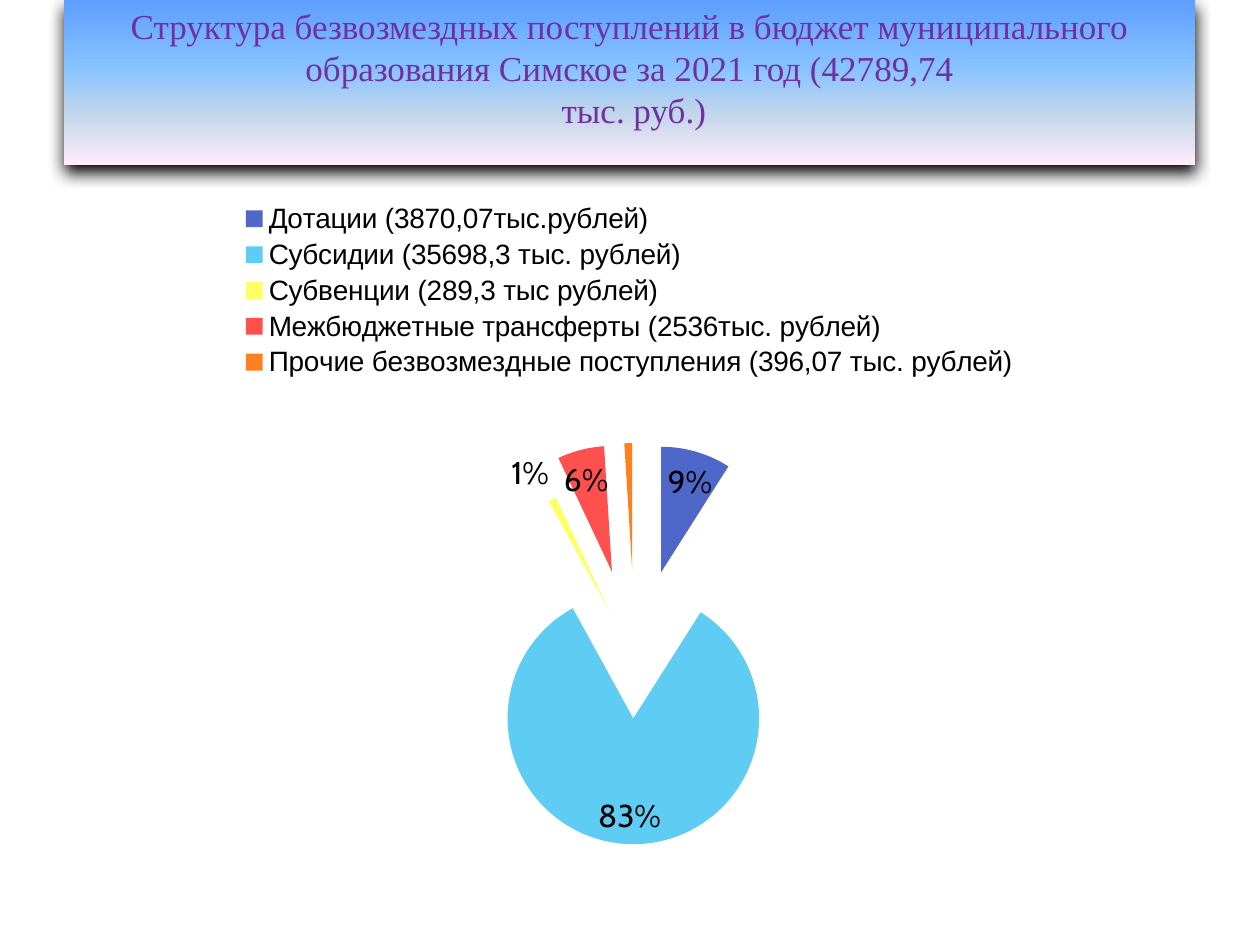
import pptx
import pptx.chart.data
import pptx.dml.color
import pptx.enum.chart
import pptx.enum.text
import pptx.oxml
import pptx.oxml.ns
import pptx.util

EMU_PER_PX = 914400 / 126
BANNER_STOPS = [(0, "5E9EFF"), (40, "85C2FF"), (70, "C4D6EB"), (100, "FFEBFA")]
TITLE_LINES = [
    "Структура безвозмездных поступлений в бюджет муниципального образования Симское за 2021 год (42789,74",
    " тыс. руб.)",
]
RECEIPTS = [
    ("Дотации (3870,07тыс.рублей)", 9, "4E67C8", 74),
    ("Субсидии (35698,3 тыс. рублей)", 83, "5ECCF3", 45),
    ("Субвенции (289,3 тыс рублей)", 1, "FFFF66", 45),
    ("Межбюджетные трансферты (2536тыс. рублей)", 6, "FF5050", 74),
    ("Прочие безвозмездные поступления (396,07 тыс. рублей)", 1, "FF8021", 74),
]


def px(length):
    return pptx.util.Emu(round(length * EMU_PER_PX))


def color(value):
    return pptx.dml.color.RGBColor.from_string(value)


def element(tag, content="", attributes=""):
    namespaces = pptx.oxml.ns.nsdecls("a", "c")
    return pptx.oxml.parse_xml(f"<{tag} {namespaces} {attributes}>{content}</{tag}>")


class SlideBuilder:
    title_font = "Times New Roman"
    title_color = "7030A0"
    label_font = "Cabin"
    legend_font = "Arial"
    text_color = "000000"

    def __init__(self, presentation):
        self.slide = presentation.slides.add_slide(presentation.slide_layouts[5])

    def style_font(self, font, name, size, value):
        font.name = name
        font.size = pptx.util.Pt(size)
        font.color.rgb = color(value)

    def title(self, left, top, width, height, lines, stops):
        shape = self.slide.shapes.title
        shape.left, shape.top, shape.width, shape.height = map(px, (left, top, width, height))
        gradient = "".join(
            f'<a:gs pos="{position * 1000}"><a:srgbClr val="{value}"/></a:gs>'
            for position, value in stops
        )
        properties = shape.fill._xPr
        properties.append(element(
            "a:gradFill",
            f'<a:gsLst>{gradient}</a:gsLst><a:lin ang="5400000" scaled="0"/>',
            'rotWithShape="1"',
        ))
        shape.line.fill.background()
        properties.append(element(
            "a:effectLst",
            '<a:outerShdw blurRad="114300" dist="50800" dir="5400000" rotWithShape="0">'
            '<a:srgbClr val="000000"><a:alpha val="98000"/></a:srgbClr></a:outerShdw>',
        ))
        frame = shape.text_frame
        frame.word_wrap = True
        frame.auto_size = pptx.enum.text.MSO_AUTO_SIZE.NONE
        frame.vertical_anchor = pptx.enum.text.MSO_ANCHOR.TOP
        frame.margin_top = px(4)
        for index, line in enumerate(lines):
            paragraph = frame.add_paragraph() if index else frame.paragraphs[0]
            paragraph.alignment = pptx.enum.text.PP_ALIGN.CENTER
            paragraph.line_spacing = pptx.util.Pt(24)
            paragraph.space_before = pptx.util.Pt(0)
            run = paragraph.add_run()
            run.text = line
            self.style_font(run.font, self.title_font, 20, self.title_color)

    def pie(self, left, top, width, height, receipts, explosion, unlabelled):
        data = pptx.chart.data.CategoryChartData()
        data.categories = [name for name, *_ in receipts]
        data.add_series("Series 1", [share for _, share, *_ in receipts])
        chart = self.slide.shapes.add_chart(
            pptx.enum.chart.XL_CHART_TYPE.PIE, *map(px, (left, top, width, height)), data
        ).chart
        chart.has_title = False
        self.style_font(chart.font, self.label_font, 18, self.text_color)
        chart.has_legend = True
        chart.legend.position = pptx.enum.chart.XL_LEGEND_POSITION.TOP
        chart.legend.include_in_layout = False
        self.style_font(chart.legend.font, self.legend_font, 16, self.text_color)
        plot = chart.plots[0]
        plot.vary_by_categories = True
        series = plot.series[0]
        for index, (_, _, value, distance) in enumerate(receipts):
            point = series.points[index]
            point.format.fill.solid()
            point.format.fill.fore_color.rgb = color(value)
            point.format.line.fill.background()
            slice_properties = series._element.findall(pptx.oxml.ns.qn("c:dPt"))[index].find(
                pptx.oxml.ns.qn("c:spPr")
            )
            slice_properties.addprevious(element("c:explosion", attributes=f'val="{distance}"'))
        series._element.find(pptx.oxml.ns.qn("c:dPt")).addprevious(
            element("c:explosion", attributes=f'val="{explosion}"')
        )
        labels = series.data_labels
        labels.show_percentage = True
        labels.show_value = False
        labels.number_format = "0%"
        labels.number_format_is_linked = False
        labels.position = pptx.enum.chart.XL_LABEL_POSITION.BEST_FIT
        self.style_font(labels.font, self.label_font, 18, self.text_color)
        labels._element.insert(
            0, element("c:dLbl", f'<c:idx val="{unlabelled}"/><c:delete val="1"/>')
        )
        self.plot_layout(chart, x=0.31, y=0.36, w=0.39, h=0.62)

    def plot_layout(self, chart, **fractions):
        area = chart._chartSpace.chart.plotArea
        for layout in area.findall(pptx.oxml.ns.qn("c:layout")):
            area.remove(layout)
        sizes = "".join(f'<c:{name} val="{value}"/>' for name, value in fractions.items())
        area.insert(0, element(
            "c:layout",
            '<c:manualLayout><c:layoutTarget val="inner"/><c:xMode val="edge"/>'
            f'<c:yMode val="edge"/>{sizes}</c:manualLayout>',
        ))


def main():
    presentation = pptx.Presentation()
    presentation.slide_width = px(1260)
    presentation.slide_height = px(945)
    builder = SlideBuilder(presentation)
    builder.title(64, 0, 1131, 165, TITLE_LINES, BANNER_STOPS)
    builder.pie(64, 189, 1131, 706, RECEIPTS, explosion=74, unlabelled=4)
    presentation.save("out.pptx")


if __name__ == "__main__":
    main()
